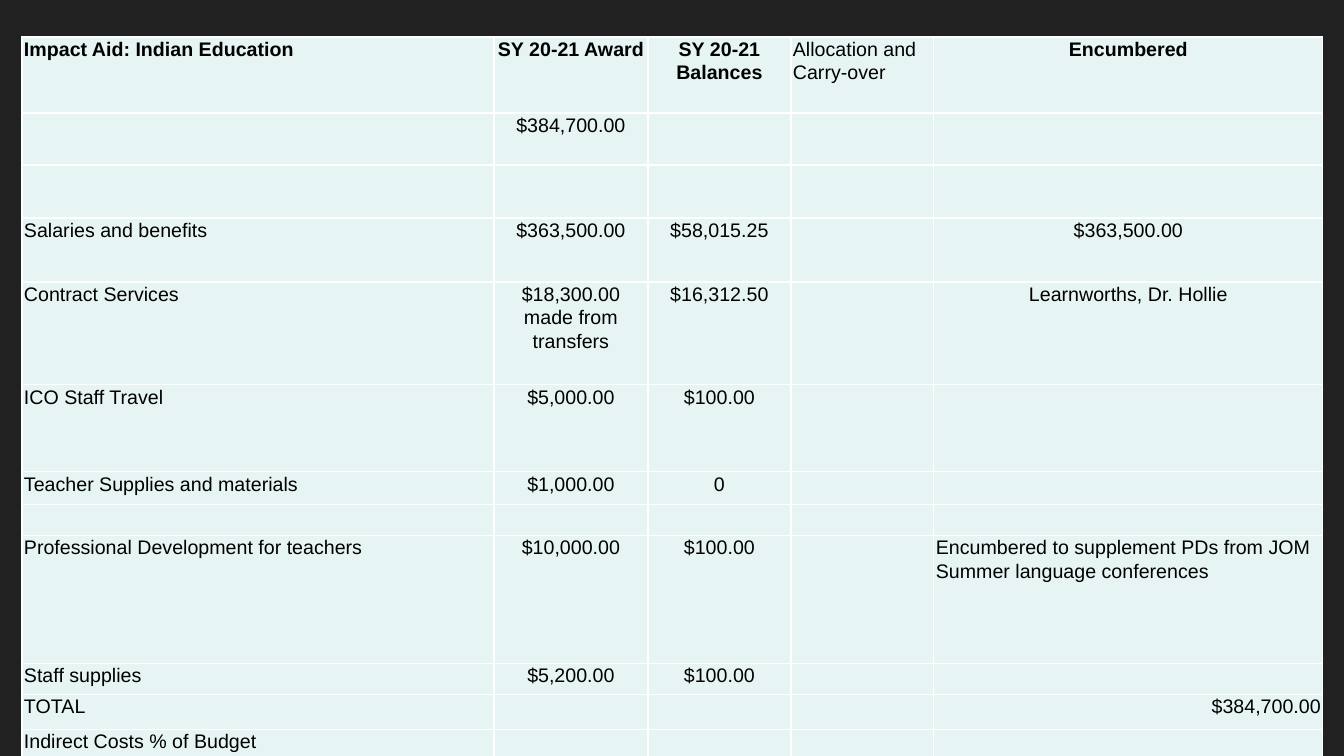
from lxml import etree
from pptx import Presentation
from pptx.dml.color import RGBColor
from pptx.enum.text import PP_ALIGN
from pptx.oxml.ns import qn
from pptx.util import Emu, Pt

LEFT, CENTER, RIGHT = PP_ALIGN.LEFT, PP_ALIGN.CENTER, PP_ALIGN.RIGHT
EMU_PER_PX = 12192000 / 1344

COLUMN_WIDTHS = [472, 154, 143, 143, 389]
COLUMN_ALIGNMENTS = [LEFT, CENTER, CENTER, LEFT, CENTER]
ROW_HEIGHTS = [76, 52, 53, 64, 103, 87, 33, 28, 128, 29, 35, 35]
BUDGET_ROWS = [
    ["Impact Aid: Indian Education", "SY 20-21 Award", "SY 20-21 Balances",
     "Allocation and Carry-over", "Encumbered"],
    ["", "$384,700.00", "", "", ""],
    ["", "", "", "", ""],
    ["Salaries and benefits", "$363,500.00", "$58,015.25", "", "$363,500.00"],
    ["Contract Services", "$18,300.00 made from transfers", "$16,312.50", "",
     "Learnworths, Dr. Hollie"],
    ["ICO Staff Travel", "$5,000.00", "$100.00", "", ""],
    ["Teacher Supplies and materials", "$1,000.00", "0", "", ""],
    ["", "", "", "", ""],
    ["Professional Development for teachers", "$10,000.00", "$100.00", "",
     "Encumbered to supplement PDs from JOM\nSummer language conferences"],
    ["Staff supplies", "$5,200.00", "$100.00", "", ""],
    ["TOTAL", "", "", "", "$384,700.00"],
    ["Indirect Costs % of Budget", "", "", "", ""],
]
# Cells (row, column) that differ from their column or row
ALIGNMENT_EXCEPTIONS = {(8, 4): LEFT, (10, 4): RIGHT}
BOLD_CELLS = {(0, 0), (0, 1), (0, 2), (0, 4)}


def px(length):
    return Emu(round(length * EMU_PER_PX))


def color(hex_string):
    return RGBColor.from_string(hex_string)


class SlideBuilder:
    font_name = "Arial"
    font_size = Pt(14)
    line_spacing = 1.07
    text_color = "000000"
    cell_color = "E6F5F3"
    border_color = "FFFFFF"
    background_color = "212121"

    def __init__(self, presentation):
        self.slide = presentation.slides.add_slide(presentation.slide_layouts[6])

    def background(self):
        fill = self.slide.background.fill
        fill.solid()
        fill.fore_color.rgb = color(self.background_color)

    def table(self, left, top, widths, heights, rows):
        shape = self.slide.shapes.add_table(
            len(heights), len(widths), px(left), px(top),
            px(sum(widths)), px(sum(heights)))
        table = shape.table
        table.first_row = table.horz_banding = False
        for column, width in zip(table.columns, widths):
            column.width = px(width)
        for row, height in zip(table.rows, heights):
            row.height = px(height)
        for row_index, texts in enumerate(rows):
            for column_index, text in enumerate(texts):
                position = (row_index, column_index)
                alignment = ALIGNMENT_EXCEPTIONS.get(
                    position, COLUMN_ALIGNMENTS[column_index])
                self.cell(table.cell(*position), text, alignment,
                          position in BOLD_CELLS)

    def cell(self, cell, text, alignment, bold):
        cell.margin_left = cell.margin_right = px(2)
        cell.margin_top = cell.margin_bottom = 0
        self.borders(cell)
        cell.fill.solid()
        cell.fill.fore_color.rgb = color(self.cell_color)
        if not text:
            return
        cell.text_frame.text = text
        for paragraph in cell.text_frame.paragraphs:
            paragraph.alignment = alignment
            paragraph.line_spacing = self.line_spacing
            for run in paragraph.runs:
                run.font.name = self.font_name
                run.font.size = self.font_size
                run.font.bold = bold
                run.font.color.rgb = color(self.text_color)

    def borders(self, cell):
        properties = cell._tc.get_or_add_tcPr()
        for side in ("a:lnL", "a:lnR", "a:lnT", "a:lnB"):
            line = etree.SubElement(properties, qn(side), w=str(Pt(1)))
            fill = etree.SubElement(line, qn("a:solidFill"))
            etree.SubElement(fill, qn("a:srgbClr"), val=self.border_color)


def main():
    presentation = Presentation()
    presentation.slide_width = px(1344)
    presentation.slide_height = px(756)

    builder = SlideBuilder(presentation)
    builder.background()
    # Budget table, running past the bottom edge
    builder.table(22, 37, COLUMN_WIDTHS, ROW_HEIGHTS, BUDGET_ROWS)

    presentation.save("out.pptx")


if __name__ == "__main__":
    main()
